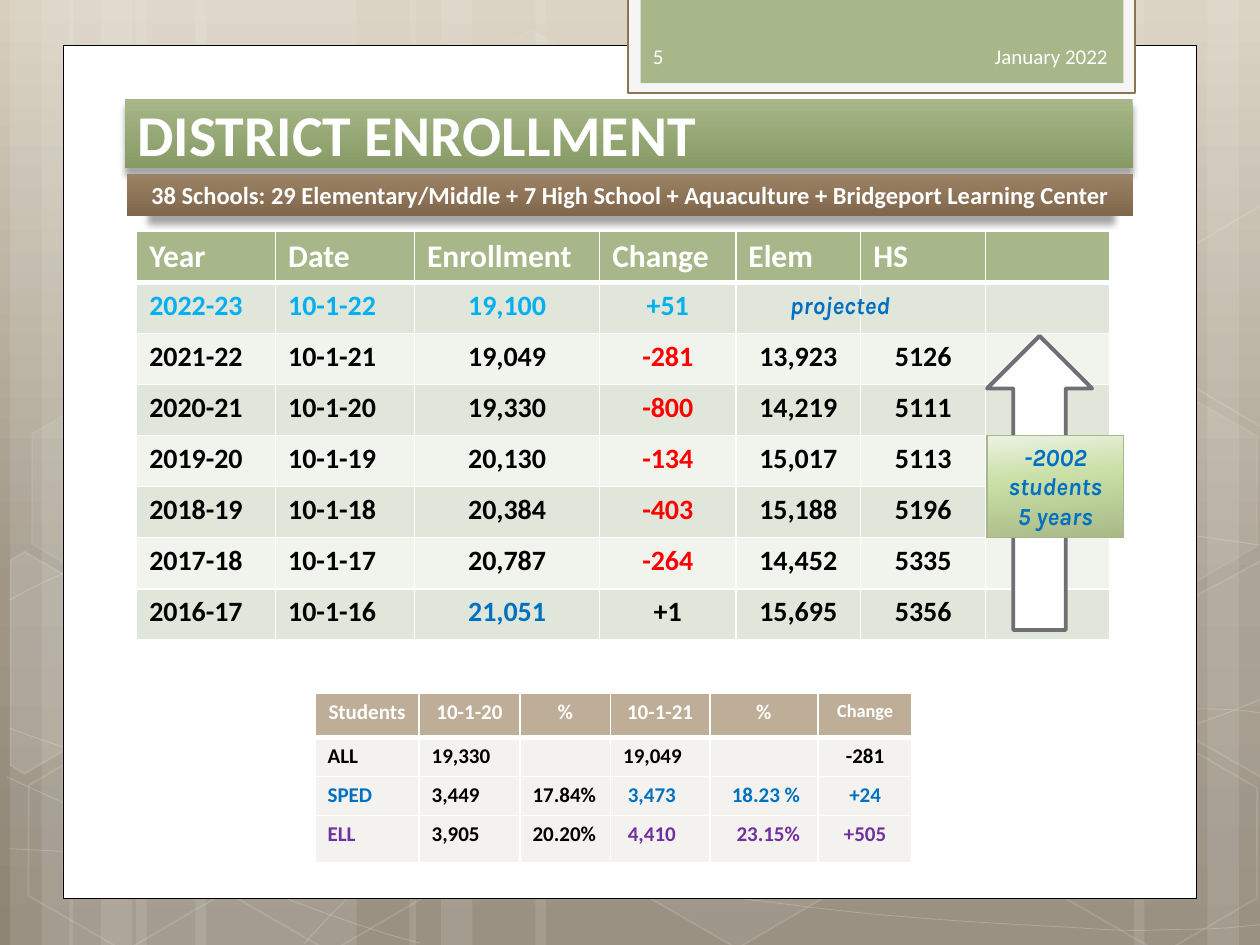
"""Build the district enrollment slide with its two tables and the five-year change arrow."""
import math

from lxml import etree
from pptx import Presentation
from pptx.dml.color import RGBColor
from pptx.enum import shapes, text
from pptx.oxml.ns import qn
from pptx.util import Pt

C = {"white": "FFFFFF", "black": "000000", "green": "A7B789", "tan": "BEAE98", "brown": "897550",
     "frame": "F5F5F5", "light": "FEFEFE", "blue": "0070C0", "sky": "00B0F0", "red": "FF0000",
     "purple": "7030A0", "grey": "6F6F74", "band1": "E1E6DA", "band2": "F1F3ED", "cream": "F4F2EF"}
KIND = shapes.MSO_SHAPE
LEFT, CENTER, RIGHT = text.PP_ALIGN.LEFT, text.PP_ALIGN.CENTER, text.PP_ALIGN.RIGHT


def paint(sp, fill=None, alpha=100, line=None, width=1, line_alpha=100):
    sp.shadow.inherit = False
    if fill:
        sp.fill.solid()
        sp.fill.fore_color.rgb = RGBColor.from_string(C[fill])
    else:
        sp.fill.background()
    if line:
        sp.line.color.rgb = RGBColor.from_string(C[line])
        sp.line.width = Pt(width)
    else:
        sp.line.fill.background()
    for where, value in (("a:solidFill", alpha), ("a:ln/a:solidFill", line_alpha)):
        tag = "/".join(qn(t) for t in where.split("/"))
        solid = sp._element.spPr.find(tag)
        if solid is not None and value < 100:
            etree.SubElement(solid[0], qn("a:alpha"), val=str(value * 1000))


def gradient(fill, root, stops, angle=270):
    fill.gradient()
    fill.gradient_angle = angle
    gs_list = root.find(".//" + qn("a:gsLst"))
    gs_list[:] = []
    for pos, rgb in stops:
        gs = etree.SubElement(gs_list, qn("a:gs"), pos=str(pos * 1000))
        etree.SubElement(gs, qn("a:srgbClr"), val=rgb)


prs = Presentation()
prs.slide_width, prs.slide_height = Pt(720), Pt(540)
s = prs.slides.add_slide(prs.slide_layouts[5])
gradient(s.background.fill, s._element, [(0, "D8CFBE"), (62, "A09787"), (100, "8F8575")])

strips = [(77.76, 126), (5.76, 36), (23.76, 60), (111.6, 126), (39.6, 36), (57.6, 60),
          (528, 126), (690, 36), (648, 60), (306, 222), (234, 36), (252, 60)]
for x, w in strips:
    paint(s.shapes.add_shape(KIND.RECTANGLE, Pt(x), 0, Pt(w), Pt(540)), "white", 10)

curves = [
    [(5, 485), (44, 487), (83, 489), (137, 488), (191, 487), (258, 486), (330, 479),
     (402, 472), (504, 458), (570, 444), (636, 431), (703, 409), (725, 397)],
    [(5, 343), (26, 332), (47, 321), (87, 310), (128, 300), (186, 284), (250, 279),
     (314, 274), (391, 273), (471, 279), (550, 284), (682, 307), (725, 312)],
    [(4, 444), (91, 484), (178, 523), (240, 539)],
    [(5, 416), (27, 424), (50, 432), (92, 444), (134, 454), (197, 472), (257, 485),
     (317, 497), (392, 510), (452, 517), (512, 525), (576, 528), (614, 530),
     (652, 533), (662, 531), (680, 531), (699, 531), (712, 529), (725, 528)],
    [(174, 539), (187, 525), (200, 510), (217, 498), (235, 485), (259, 470), (279, 460),
     (300, 450), (312, 446), (338, 438), (364, 431), (413, 421), (438, 416),
     (464, 411), (467, 411), (490, 410), (512, 407), (547, 405), (572, 405),
     (597, 404), (638, 404), (638, 404), (654, 404), (670, 405), (686, 405),
     (699, 405), (711, 406), (718, 407), (724, 408), (722, 407), (724, 408)]]
for curve in curves:
    points = [(Pt(x), Pt(y)) for x, y in curve]
    fb = s.shapes.build_freeform(*points[0])
    fb.add_line_segments(points[1:], close=False)
    sp = fb.convert_to_shape()
    outline = sp._element.spPr.find(".//" + qn("a:pathLst"))[0]
    controls = outline.findall(qn("a:lnTo"))
    for i in range(0, len(controls), 3):
        bezier = etree.SubElement(outline, qn("a:cubicBezTo"))
        for control in controls[i:i + 3]:
            bezier.append(control[0])
            outline.remove(control)
    paint(sp, line="white", width=0.5, line_alpha=20)

hexagons = [(240.5, 26, 4, 8), (358, 424, 6, 12), (8, 425.5, 0, 12), (10, 224.5, 7, 8),
            (125.5, 426, 0, 12), (542, 326, 10, 12), (600.5, 427, 0, 12), (600.5, 226, 7, 8)]
for x, y, alpha, line_alpha in hexagons:
    sp = s.shapes.add_shape(KIND.HEXAGON, Pt(x), Pt(y), Pt(126), Pt(109.5))
    sp.adjustments[0] = 0.285
    sp.rotation = 30
    paint(sp, "white" if alpha else None, alpha, "white", 1, line_alpha)

cut_hexagons = [
    (10, 25.9, 385.2, [(6, 320), (14, 315), (69, 347), (68, 410), (14, 442), (6, 437)]),
    (4, 709.2, 374.4, [(667, 349), (721, 320), (726, 321), (726, 441), (721, 444), (667, 413)]),
    (0, 709.2, 173.5, [(667, 149), (721, 117), (727, 121), (726, 241), (721, 244), (667, 212)])]
cos, sin = math.cos(math.radians(30)), math.sin(math.radians(30))
for alpha, cx, cy, outline in cut_hexagons:
    points = [(Pt(cx + (x - cx) * cos + (y - cy) * sin), Pt(cy - (x - cx) * sin + (y - cy) * cos))
              for x, y in outline]
    fb = s.shapes.build_freeform(*points[0])
    fb.add_line_segments(points[1:])
    sp = fb.convert_to_shape()
    sp.rotation = 30
    paint(sp, "white" if alpha else None, alpha, "white", 1, 12)

for x, y, w, h, fill, line, width in [(36, 26, 648, 487.2, "white", "black", 0.5),
                                      (359, -1.44, 289.6, 54.72, "frame", "brown", 1.25),
                                      (366, -1.44, 276, 48.96, "green", None, 0)]:
    sp = s.shapes.add_shape(KIND.RECTANGLE, Pt(x), Pt(y), Pt(w), Pt(h))
    paint(sp, fill, line=line, width=width)
date = s.shapes.add_textbox(Pt(472.3), Pt(17.6), Pt(167.8), Pt(28.8))
number = s.shapes.add_textbox(Pt(366), Pt(17.6), Pt(105), Pt(28.8))

title = s.shapes.title
title.left, title.top, title.width, title.height = Pt(71.3), Pt(56.6), Pt(576), Pt(39.6)
s.shapes._spTree.append(title._element)
banner = s.shapes.add_shape(KIND.RECTANGLE, Pt(72.7), Pt(99.2), Pt(575), Pt(24.5))
for sp, top, bottom, scale in [(title, "A7B789", "879A64", 100), (banner, "9C8265", "80674C", 96)]:
    paint(sp)
    gradient(sp.fill, sp._element, [(0, top), (100, bottom)])
    shadow = etree.SubElement(sp._element.spPr.find(qn("a:effectLst")), qn("a:outerShdw"),
                              blurRad=str(Pt(3.5)), dist=str(Pt(4)), dir="5400000",
                              sx=str(scale * 1000), algn="ctr", rotWithShape="0")
    rgb = etree.SubElement(shadow, qn("a:srgbClr"), val=C["black"])
    etree.SubElement(rgb, qn("a:alpha"), val="34000")

students = [["Students", "10-1-20", "%", "10-1-21", "%", "Change"],
            ["ALL", "19,330", "", "19,049", "", "-281"],
            ["SPED", "3,449", "17.84%", "3,473", "18.23 %", "+24"],
            ["ELL", "3,905", "20.20%", "4,410", "23.15%", "+505"]]
enrollment = [["Year", "Date", "Enrollment", "Change", "Elem", "HS", ""],
              ["2022-23", "10-1-22", "19,100", "+51", "", "", ""],
              ["2021-22", "10-1-21", "19,049", "-281", "13,923", "5126", ""],
              ["2020-21", "10-1-20", "19,330", "-800", "14,219", "5111", ""],
              ["2019-20", "10-1-19", "20,130", "-134", "15,017", "5113", ""],
              ["2018-19", "10-1-18", "20,384", "-403", "15,188", "5196", ""],
              ["2017-18", "10-1-17", "20,787", "-264", "14,452", "5335", ""],
              ["2016-17", "10-1-16", "21,051", "+1", "15,695", "5356", ""]]
indents = {(2, 3): 2.7, (2, 4): 5.4, (3, 3): 2.7, (3, 4): 8.1}
tables = [(students, 180, 396.3, [59.5, 57.6, 51.8, 56.7, 61.9, 53.8], [25.2, 22.3, 22.3, 26.8]),
          (enrollment, 78.1, 132.1, [79.4, 79.4, 105.8, 77.8, 71.4, 71.4, 71.2], [29.2] * 8)]
for data, x, y, widths, heights in tables:
    small = data is students
    table = s.shapes.add_table(len(heights), len(widths), Pt(x), Pt(y),
                               Pt(sum(widths)), Pt(sum(heights))).table
    for col, w in zip(table.columns, widths):
        col.width = Pt(w)
    for i, row in enumerate(data):
        table.rows[i].height = Pt(heights[i])
        for j, value in enumerate(row):
            cell = table.cell(i, j)
            tc_pr = cell._tc.get_or_add_tcPr()
            for side in "LRTB":
                thick = (i, side) in ((0, "B"), (1, "T"))
                ln = etree.SubElement(tc_pr, qn("a:ln" + side), w=str(Pt(3 if thick else 1)))
                etree.SubElement(etree.SubElement(ln, qn("a:solidFill")), qn("a:srgbClr"),
                                 val=C["white"])
            if small:
                fill = "cream" if i else "tan"
                color = ["black", "black", "blue", "purple"][i] if j not in (1, 2) else "black"
                size = 10.5 if value == "Change" else 12
                centered = i == 0 or j == 5
                cell.margin_left = Pt(7.2 + indents.get((i, j), 0))
            else:
                fill = ("band1" if i % 2 else "band2") if i else "green"
                color = ("sky" if i == 1 else "red" if j == 3 and value[0] == "-"
                         else "blue" if (i, j) == (7, 2) else "black")
                size = 16 if i else 18
                centered = i > 0 and j > 1
            cell.fill.solid()
            cell.fill.fore_color.rgb = RGBColor.from_string(C[fill])
            p = cell.text_frame.paragraphs[0]
            p.alignment = CENTER if centered else LEFT
            if not value:
                etree.SubElement(p._p, qn("a:endParaRPr"), sz=str(size * 100))
                continue
            r = p.add_run()
            r.text = value
            r.font.name, r.font.size, r.font.bold = "Calibri", Pt(size), True
            r.font.color.rgb = RGBColor.from_string(C[color if i else "white"])

projected = s.shapes.add_textbox(Pt(432), Pt(162), Pt(96), Pt(24.5))
arrow = s.shapes.add_shape(KIND.UP_ARROW, Pt(564), Pt(192), Pt(60), Pt(168))
paint(arrow, "white", line="grey", width=2.25)
callout = s.shapes.add_shape(KIND.RECTANGLE, Pt(564), Pt(248.9), Pt(78), Pt(58.2))
paint(callout, line="green", width=0.75)
gradient(callout.fill, callout._element, [(0, "EDF2E5"), (40, "CAE0A6"), (100, "A8B987")], 276)

MIDDLE, TOP = text.MSO_ANCHOR.MIDDLE, text.MSO_ANCHOR.TOP
labels = [
    (date, ["January 2022"], 12, "Calibri", "light", RIGHT, MIDDLE),
    (number, ["5"], 12, "Calibri", "light", LEFT, MIDDLE),
    (title, ["DISTRICT ENROLLMENT"], 33, "Calibri", "white", LEFT, MIDDLE),
    (banner, ["38 Schools: 29 Elementary/Middle + 7 High School + Aquaculture + "
              "Bridgeport Learning Center"], 14, "Calibri", "white", CENTER, TOP),
    (projected, ["projected"], 14, "Karla", "blue", CENTER, TOP),
    (callout, ["-2002 students", "5 years"], 14, "Karla", "blue", CENTER, TOP)]
for sp, lines, size, font, color, align, anchor in labels:
    tf = sp.text_frame
    tf.word_wrap, tf.auto_size, tf.vertical_anchor = True, text.MSO_AUTO_SIZE.NONE, anchor
    for i, line in enumerate(lines):
        p = tf.add_paragraph() if i else tf.paragraphs[0]
        p.alignment = align
        r = p.add_run()
        r.text = line
        r.font.name, r.font.size = font, Pt(size)
        r.font.bold, r.font.italic = size > 12, font == "Karla"
        r.font.color.rgb = RGBColor.from_string(C[color])

prs.save("out.pptx")
